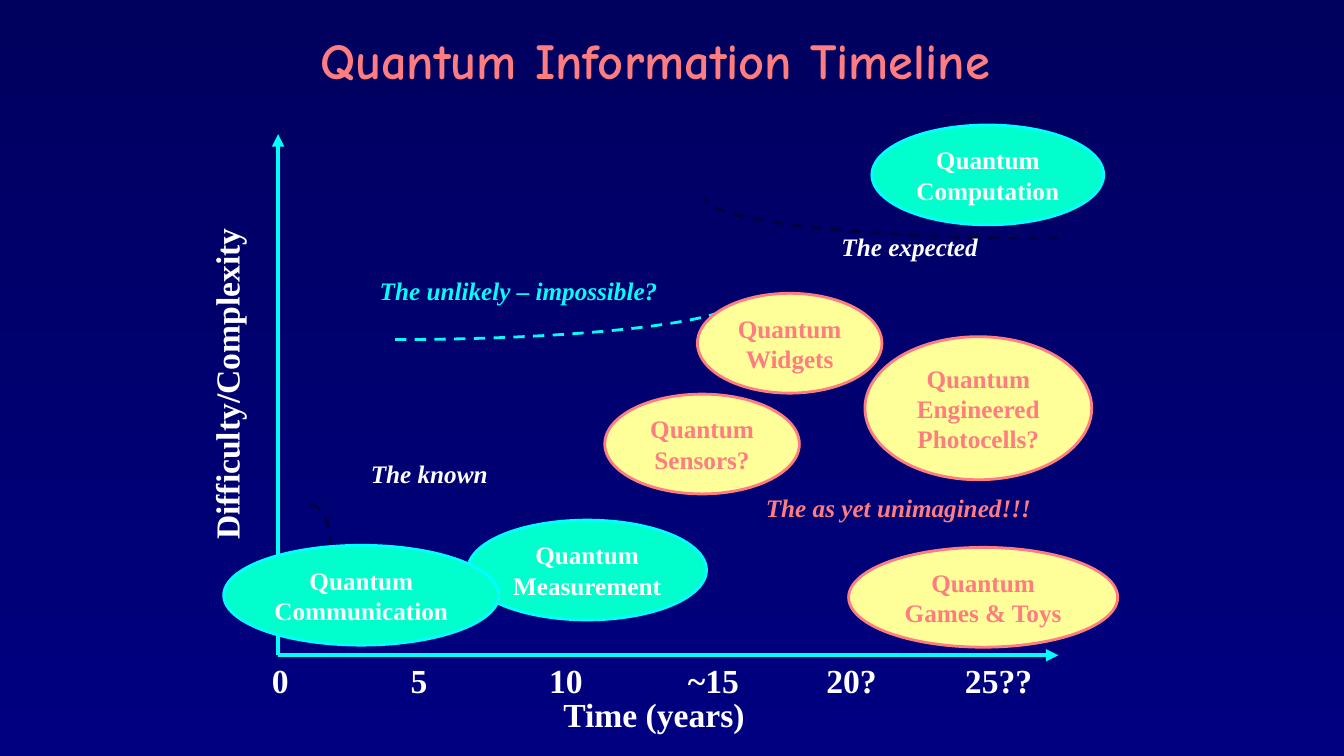
import math
from dataclasses import dataclass

from lxml import etree
from pptx import Presentation
from pptx import util as u
from pptx.dml.color import RGBColor
from pptx.enum import dml, shapes, text
from pptx.oxml.ns import qn

SERIF, COMIC = "Times New Roman", "Comic Neue"
WHITE, CYAN, GREEN = "FFFFFF", "00FFFF", "00FFCC"
CORAL, YELLOW, NAVY = "FF7C80", "FFFF99", "000040"
ORIGIN = (198.7, 468)
TICK_STEP = 99


@dataclass
class Bubble:
    box: tuple
    lines: tuple
    known: bool = False


@dataclass
class Curve:
    start: tuple
    end: tuple
    color: str


@dataclass
class Label:
    box: tuple
    words: str
    color: str = WHITE
    size: float = 18
    italic: bool = True
    rotation: float = 0


def rgb(color: str) -> RGBColor:
    return RGBColor.from_string(color)


def write(tf, *lines: str, size: float = 18, color: str = WHITE, font: str = SERIF,
          italic: bool = False, align=text.PP_ALIGN.LEFT, spacing=None,
          anchor=text.MSO_ANCHOR.TOP, wrap: bool = False) -> None:
    tf.word_wrap = wrap
    tf.vertical_anchor = anchor
    for i, line in enumerate(lines):
        p = tf.add_paragraph() if i else tf.paragraphs[0]
        p.alignment, p.line_spacing = align, spacing
        r = p.add_run()
        r.text = line
        r.font.name, r.font.size = font, u.Pt(size)
        r.font.bold, r.font.italic = True, italic
        r.font.color.rgb = rgb(color)


def add_box(s, box: tuple):
    return s.shapes.add_textbox(*map(u.Pt, box))


def add_label(s, label: Label):
    sp = add_box(s, label.box)
    sp.rotation = label.rotation
    write(sp.text_frame, label.words, size=label.size, color=label.color, italic=label.italic)
    return sp


def add_bubble(s, bubble: Bubble) -> None:
    fill, line, font = (GREEN, CYAN, WHITE) if bubble.known else (YELLOW, CORAL, CORAL)
    sp = s.shapes.add_shape(shapes.MSO_SHAPE.OVAL, *map(u.Pt, bubble.box))
    sp.shadow.inherit = False
    sp.fill.solid()
    sp.fill.fore_color.rgb = rgb(fill)
    sp.line.color.rgb = rgb(line)
    sp.line.width = u.Pt(2)
    write(sp.text_frame, *bubble.lines, color=font, align=text.PP_ALIGN.CENTER,
          anchor=text.MSO_ANCHOR.MIDDLE, wrap=not bubble.known)


def add_curve(s, curve: Curve, steps: int = 24) -> None:
    """Quarter ellipse that leaves its start horizontally."""
    (x0, y0), (x1, y1) = curve.start, curve.end
    angles = [math.pi / 2 * i / steps for i in range(steps + 1)]
    points = [(u.Pt(x0 + (x1 - x0) * math.sin(a)), u.Pt(y1 + (y0 - y1) * math.cos(a)))
              for a in angles]
    builder = s.shapes.build_freeform(*points[0])
    builder.add_line_segments(points[1:], close=False)
    sp = builder.convert_to_shape()
    sp.shadow.inherit = False
    sp.fill.background()
    sp.line.color.rgb = rgb(curve.color)
    sp.line.width = u.Pt(2)
    sp.line.dash_style = dml.MSO_LINE.DASH


def add_axis(s, end: tuple) -> None:
    axis = s.shapes.add_connector(shapes.MSO_CONNECTOR.STRAIGHT, *map(u.Pt, ORIGIN + end))
    axis.line.color.rgb = rgb(CYAN)
    axis.line.width = u.Pt(3)
    etree.SubElement(axis.line._get_or_add_ln(), qn("a:tailEnd"), type="triangle")
    etree.SubElement(axis._element.spPr, qn("a:effectLst"))


def add_ticks(s, ticks: tuple) -> None:
    sp = add_label(s, Label((187.2, 468, 557.3, 36), "\t".join(ticks), size=24, italic=False))
    stops = etree.SubElement(sp.text_frame.paragraphs[0]._p.get_or_add_pPr(), qn("a:tabLst"))
    for i in range(1, len(ticks)):
        etree.SubElement(stops, qn("a:tab"), pos=str(u.Pt(TICK_STEP * i)), algn="l")


TICKS = ("0", "5", "10", "~15", "20?", "25??")

AXIS_TITLES = [
    Label((395.3, 491.8, 144.7, 36), "Time (years)", size=24, italic=False),
    Label((43.2, 256.3, 236.9, 36), "Difficulty/Complexity", size=24, italic=False, rotation=270),
]

CURVES = [
    Curve((221.8, 360.7), (236.2, 389.5), NAVY),
    Curve((756, 170.6), (504, 141.8), NAVY),
    Curve((282.2, 242.6), (527.8, 213.8), CYAN),
]

BUBBLES = [
    Bubble((334.1, 371.5, 170.6, 71.3), ("Quantum", "Measurement"), known=True),
    Bubble((159.8, 389.5, 196.6, 71.3), ("Quantum", "Communication"), known=True),
    Bubble((622.8, 89.3, 165.6, 71.3), ("Quantum", "Computation"), known=True),
    Bubble((432, 281.5, 139, 71.3), ("Quantum", "Sensors?")),
    Bubble((617.8, 240.5, 162, 102.2), ("Quantum", "Engineered Photocells?")),
    Bubble((498.2, 209.5, 131.8, 71.3), ("Quantum", "Widgets")),
    Bubble((606.2, 391, 192.2, 71.3), ("Quantum", "Games & Toys")),
]

REMARKS = [
    Label((257.8, 324, 97.9, 28.8), "The known"),
    Label((594, 162, 112.3, 28.8), "The expected"),
    Label((264.2, 193, 213.1, 28.8), "The unlikely – impossible?", CYAN),
    Label((540, 347.8, 203.8, 28.8), "The as yet unimagined!!!", CORAL),
]


def main() -> None:
    prs = Presentation()
    prs.slide_width, prs.slide_height = u.Pt(960), u.Pt(540)
    s = prs.slides.add_slide(prs.slide_layouts[6])

    # Background, dark at the top
    fill = s.background.fill
    fill.gradient()
    fill.gradient_angle = 270
    for stop, (position, color) in zip(fill.gradient_stops, ((0, "00005F"), (1, "000080"))):
        stop.position, stop.color.rgb = position, rgb(color)

    # Title
    write(add_box(s, (162, 0, 612, 90)).text_frame, "Quantum Information Timeline",
          size=36, color=CORAL, font=COMIC, align=text.PP_ALIGN.CENTER, spacing=0.89,
          anchor=text.MSO_ANCHOR.MIDDLE, wrap=True)

    # Axes
    add_ticks(s, TICKS)
    for end in ((ORIGIN[0], 95.8), (756, ORIGIN[1])):
        add_axis(s, end)
    for label in AXIS_TITLES:
        add_label(s, label)

    # Curves lie behind the bubbles
    for curve in CURVES:
        add_curve(s, curve)
    for bubble in BUBBLES:
        add_bubble(s, bubble)
    for remark in REMARKS:
        add_label(s, remark)

    prs.save("out.pptx")


if __name__ == "__main__":
    main()
